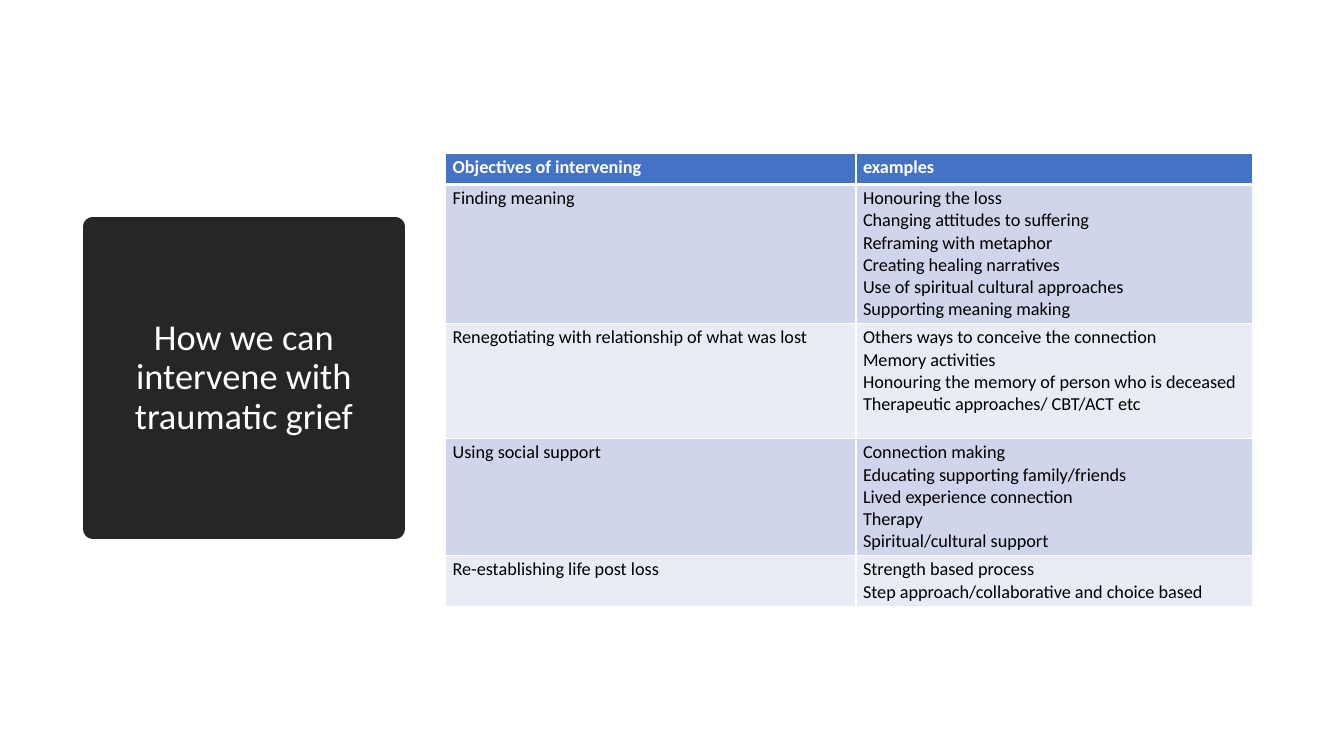
from pptx import Presentation
from pptx.dml.color import RGBColor
from pptx.enum.shapes import MSO_SHAPE
from pptx.enum.text import MSO_ANCHOR, PP_ALIGN
from pptx.oxml.ns import qn
from pptx.util import Inches, Pt
from lxml.etree import SubElement

# Content
TITLE = "How we can intervene with traumatic grief"
HEADER = ("Objectives of intervening", "examples")
OBJECTIVES = [
    ("Finding meaning", [
        "Honouring the loss",
        "Changing attitudes to suffering",
        "Reframing with metaphor",
        "Creating healing narratives",
        "Use of spiritual cultural approaches",
        "Supporting meaning making"]),
    ("Renegotiating with relationship of what was lost", [
        "Others ways to conceive the connection",
        "Memory activities",
        "Honouring the memory of person who is deceased",
        "Therapeutic approaches/ CBT/ACT etc"]),
    ("Using social support", [
        "Connection making",
        "Educating supporting family/friends",
        "Lived experience connection",
        "Therapy",
        "Spiritual/cultural support"]),
    ("Re-establishing life post loss", [
        "Strength based process",
        "Step approach/collaborative and choice based"]),
]
COL_WIDTHS = (4.07, 3.93)
ROW_HEIGHTS = (0.31, 1.35, 1.14, 1.14, 0.51)

THEME = {
    "font": "Calibri", "title_size": 26, "table_size": 13,
    "white": "FFFFFF", "black": "000000", "panel": "262626",
    "header": "4472C4", "bands": ("CFD5EA", "E9EBF5"),
}


def rgb(name):
    return RGBColor.from_string(name)


def write(tf, lines, size, color, bold=False, align=PP_ALIGN.LEFT, spacing=None):
    for i, line in enumerate(lines):
        p = tf.paragraphs[0] if i == 0 else tf.add_paragraph()
        p.alignment = align
        if spacing:
            p.line_spacing = spacing
        r = p.add_run()
        r.text = line
        r.font.name, r.font.size, r.font.bold = THEME["font"], Pt(size), bold
        r.font.color.rgb = rgb(color)


def set_borders(cell, bottom, top):
    tc_pr = cell._tc.get_or_add_tcPr()
    widths = (("a:lnL", 1), ("a:lnR", 1), ("a:lnT", top), ("a:lnB", bottom))
    for i, (tag, width) in enumerate(widths):
        ln = SubElement(tc_pr, qn(tag), w=str(Pt(width)))
        fill = SubElement(ln, qn("a:solidFill"))
        SubElement(fill, qn("a:srgbClr"), val=THEME["white"])
        tc_pr.insert(i, ln)  # borders come before the cell fill


prs = Presentation()
prs.slide_width, prs.slide_height = Inches(13.33), Inches(7.5)
s = prs.slides.add_slide(prs.slide_layouts[6])

# Title panel: a thick line with round joins softens the corners
panel = s.shapes.add_shape(MSO_SHAPE.RECTANGLE, Inches(0.92), Inches(2.25),
                           Inches(3), Inches(3))
panel.shadow.inherit = False
panel.fill.solid()
panel.fill.fore_color.rgb = rgb(THEME["panel"])
panel.line.color.rgb = rgb(THEME["panel"])
panel.line.width = Pt(13.75)
SubElement(panel.line._get_or_add_ln(), qn("a:round"))
tf = panel.text_frame
tf.word_wrap = True
tf.vertical_anchor = MSO_ANCHOR.MIDDLE
write(tf, [TITLE], THEME["title_size"], THEME["white"],
      align=PP_ALIGN.CENTER, spacing=0.9)

# Table of objectives and examples
rows = [[[text] for text in HEADER]]
rows += [[[objective], examples] for objective, examples in OBJECTIVES]
table = s.shapes.add_table(len(rows), len(HEADER), Inches(4.42), Inches(1.52),
                           Inches(sum(COL_WIDTHS)), Inches(sum(ROW_HEIGHTS))).table
for col, width in zip(table.columns, COL_WIDTHS):
    col.width = Inches(width)
for i, (row, height) in enumerate(zip(rows, ROW_HEIGHTS)):
    table.rows[i].height = Inches(height)
    is_header = i == 0
    fill = THEME["header"] if is_header else THEME["bands"][(i - 1) % 2]
    for j, lines in enumerate(row):
        cell = table.cell(i, j)
        cell.margin_left = cell.margin_right = Inches(0.07)
        cell.margin_top = cell.margin_bottom = Inches(0.03)
        cell.fill.solid()
        cell.fill.fore_color.rgb = rgb(fill)
        set_borders(cell, bottom=3 if is_header else 1, top=3 if i == 1 else 1)
        write(cell.text_frame, lines, THEME["table_size"],
              THEME["white"] if is_header else THEME["black"], bold=is_header)

prs.save("out.pptx")
